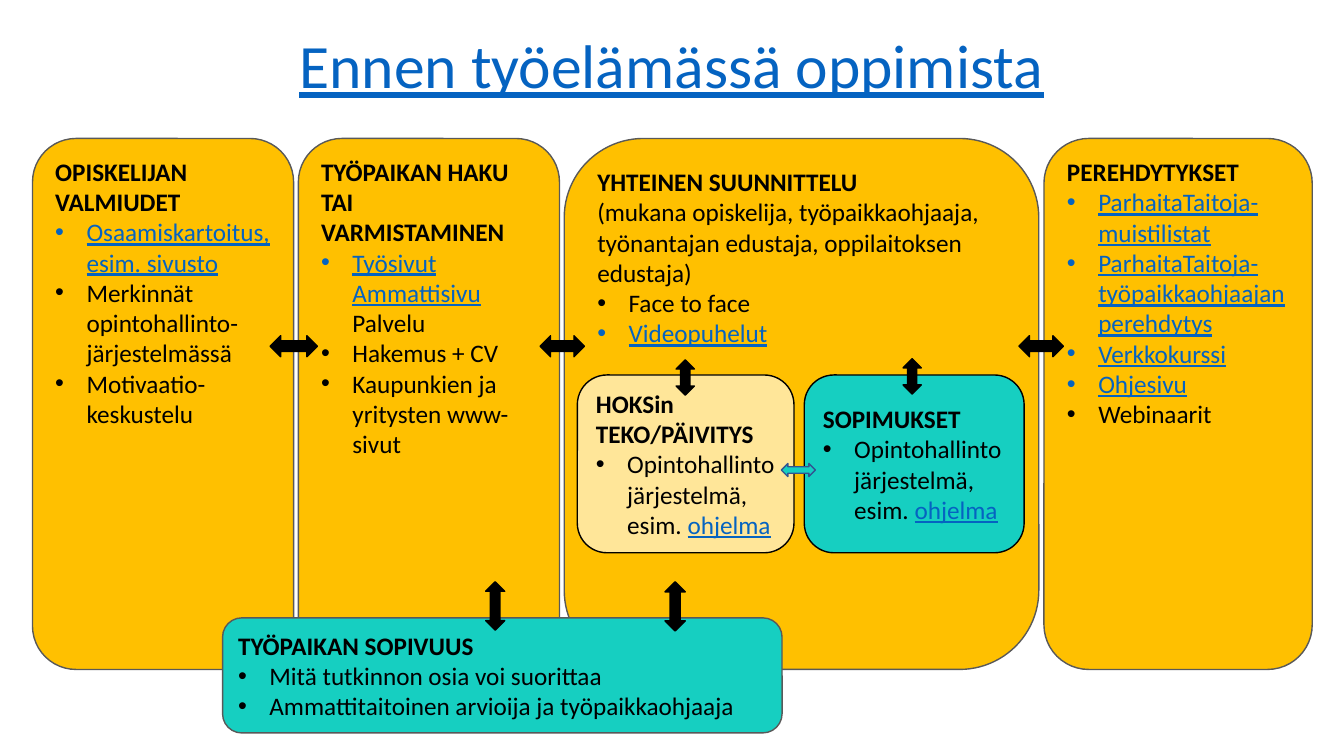
import pptx
import pptx.util
import pptx.dml.color
import pptx.enum.shapes
import pptx.enum.text
import lxml.etree

Cm, Pt = pptx.util.Cm, pptx.util.Pt
KIND = pptx.enum.shapes.MSO_SHAPE
ANCHOR = pptx.enum.text.MSO_ANCHOR
ALIGN = pptx.enum.text.PP_ALIGN
HUE = {"gold": "FFC000", "cream": "FFE699", "teal": "16CFC1", "grey": "595959",
       "black": "000000", "link": "0563C1", "blue": "325491"}
# Run formats: head, plain text, link
LOOK = {
    "h": {"bold": True, "underline": False, "hue": "black"},
    "t": {"bold": False, "underline": False, "hue": "black"},
    "a": {"bold": False, "underline": True, "hue": "link"},
}


def paint(kind, place, fill, line):
    shape = deck.shapes.add_shape(kind, *[Cm(n) for n in place])
    shape.shadow.inherit = False
    shape.fill.solid()
    shape.fill.fore_color.rgb = pptx.dml.color.RGBColor.from_string(HUE[fill])
    shape.line.color.rgb = pptx.dml.color.RGBColor.from_string(HUE[line])
    shape.line.width = Pt(1)
    return shape


def write(para, look, text, size):
    run = para.add_run()
    run.text = text
    run.font.name = "Calibri"
    run.font.size = Pt(size)
    for key, value in LOOK[look].items():
        if key == "hue":
            run.font.color.rgb = pptx.dml.color.RGBColor.from_string(HUE[value])
        else:
            setattr(run.font, key, value)


show = pptx.Presentation()
show.slide_width, show.slide_height = Cm(33.87), Cm(19.05)
deck = show.slides.add_slide(show.slide_layouts[5])

# Title
title = deck.shapes.title
title.left, title.top, title.width, title.height = Cm(6.45), Cm(0.53), Cm(20.96), Cm(2.41)
title.text_frame.vertical_anchor = ANCHOR.MIDDLE
para = title.text_frame.paragraphs[0]
para.alignment = ALIGN.CENTER
para.line_spacing = 0.9
write(para, "a", "Ennen työelämässä oppimista", 44)

# Boxes: place, fill, line, anchor, paragraphs of (look, text) runs
TOP, TALL = 3.49, 13.38
MID, LOW = 9.45, 4.48
system = [("t", "Opintohallintojärjestelmä, esim. "), ("a", "ohjelma")]
boxes = [
    ((0.82, TOP, 6.58, TALL), "gold", "grey", ANCHOR.TOP, [
        [("h", "OPISKELIJAN VALMIUDET")],
        [("a", "Osaamiskartoitus, esim. sivusto")],
        [("t", "Merkinnät opintohallinto-järjestelmässä")],
        [("t", "Motivaatio-keskustelu")]]),
    ((7.52, TOP, 6.58, TALL), "gold", "grey", ANCHOR.TOP, [
        [("h", "TYÖPAIKAN HAKU TAI VARMISTAMINEN")],
        [("a", "Työsivut"), ("t", " "), ("a", "Ammattisivu"), ("br", ""), ("t", "Palvelu")],
        [("t", "Hakemus + CV")],
        [("t", "Kaupunkien ja yritysten www-sivut")]]),
    ((14.22, TOP, 11.96, TALL), "gold", "grey", ANCHOR.TOP, [
        [("h", "YHTEINEN SUUNNITTELU"), ("br", ""),
         ("t", "(mukana opiskelija, työpaikkaohjaaja, työnantajan edustaja, "
               "oppilaitoksen edustaja)")],
        [("t", "Face to face")],
        [("a", "Videopuhelut")]]),
    ((26.31, TOP, 6.76, TALL), "gold", "grey", ANCHOR.TOP, [
        [("h", "PEREHDYTYKSET")],
        [("a", "ParhaitaTaitoja-muistilistat")],
        [("a", "ParhaitaTaitoja-työpaikkaohjaajan perehdytys")],
        [("a", "Verkkokurssi")],
        [("a", "Ohjesivu")],
        [("t", "Webinaarit")]]),
    ((20.27, MID, 5.54, LOW), "teal", "black", ANCHOR.MIDDLE,
     [[("h", "SOPIMUKSET")], system]),
    ((14.55, MID, 5.46, LOW), "cream", "black", ANCHOR.MIDDLE,
     [[("h", "HOKSin")], [("h", "TEKO/PÄIVITYS")], system]),
    ((5.61, 15.57, 14.1, 2.9), "teal", "grey", ANCHOR.MIDDLE, [
        [("h", "TYÖPAIKAN SOPIVUUS")],
        [("t", "Mitä tutkinnon osia voi suorittaa")],
        [("t", "Ammattitaitoinen arvioija ja työpaikkaohjaaja")]]),
]
for place, fill, line, anchor, paras in boxes:
    frame = paint(KIND.ROUNDED_RECTANGLE, place, fill, line).text_frame
    frame.word_wrap = True
    frame.vertical_anchor = anchor
    for i, runs in enumerate(paras):
        para = frame.add_paragraph() if i else frame.paragraphs[0]
        para.alignment = ALIGN.LEFT
        for look, text in runs:
            if look == "br":
                para.add_line_break()
            else:
                write(para, look, text, 18)
        # Every paragraph but a heading has a bullet
        if runs[0][0] != "h":
            props = para._p.get_or_add_pPr()
            props.set("marL", str(Cm(0.79)))
            props.set("indent", str(-Cm(0.79)))
            space = "{http://schemas.openxmlformats.org/drawingml/2006/main}"
            lxml.etree.SubElement(props, space + "buFont").set("typeface", "Arial")
            lxml.etree.SubElement(props, space + "buChar").set("char", "•")

# Arrows
ROW = 8.46
ACROSS, UP = KIND.LEFT_RIGHT_ARROW, KIND.UP_DOWN_ARROW
arrows = [
    (ACROSS, (6.81, ROW, 1.19, 0.53), "black", "black"),
    (ACROSS, (13.61, ROW, 1.12, 0.53), "black", "black"),
    (ACROSS, (25.68, ROW, 1.12, 0.53), "black", "black"),
    (ACROSS, (19.69, 11.68, 0.86, 0.33), "teal", "blue"),
    (UP, (17.04, 9.07, 0.46, 0.89), "black", "black"),
    (UP, (22.76, 9.04, 0.46, 0.89), "black", "black"),
    (UP, (12.24, 14.66, 0.48, 1.22), "black", "black"),
    (UP, (16.76, 14.66, 0.51, 1.24), "black", "black"),
]
for arrow in arrows:
    paint(*arrow)

show.save("out.pptx")
